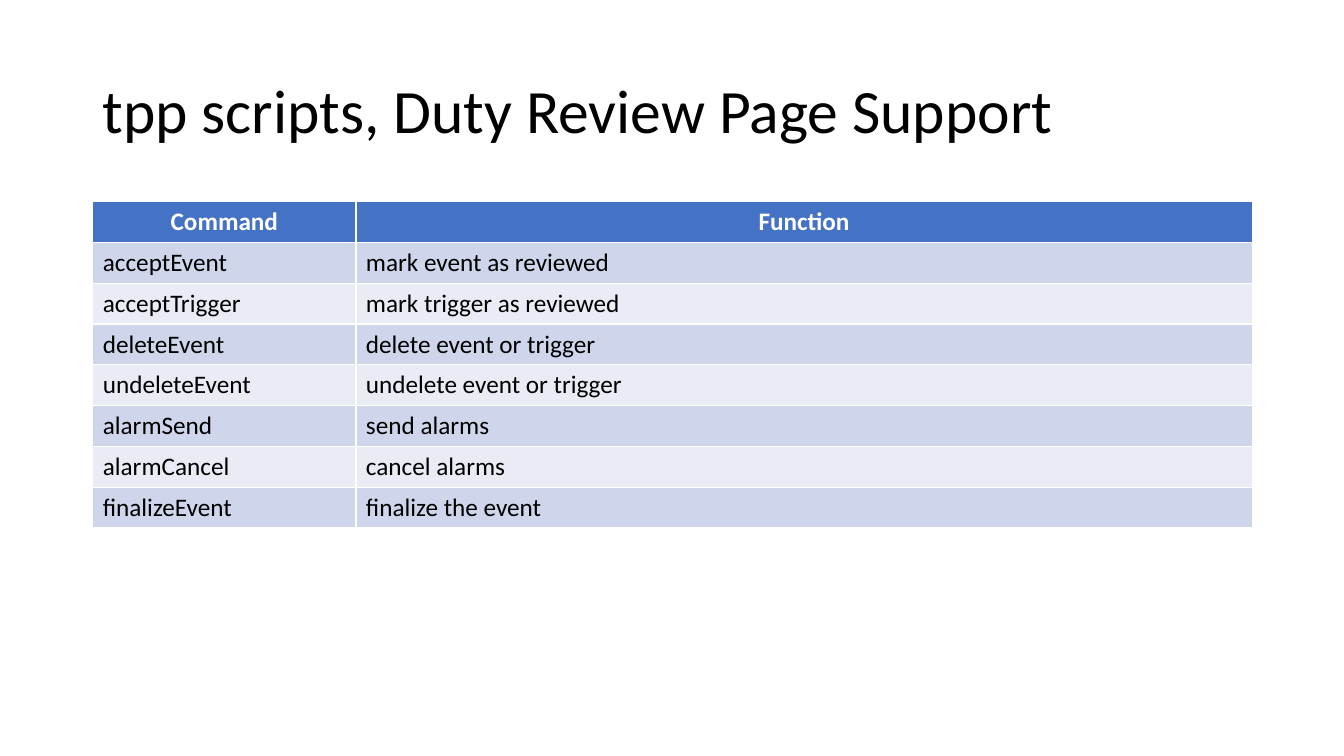
"""Build a slide with a table of the duty review page commands."""
from pptx import Presentation
from pptx.dml.color import RGBColor
from pptx.enum.text import MSO_ANCHOR, PP_ALIGN
from pptx.util import Inches, Pt

MIDDLE = MSO_ANCHOR.MIDDLE
LEFT, CENTER = PP_ALIGN.LEFT, PP_ALIGN.CENTER
FONT = "Calibri"
COLORS = {"text": "000000", "header_text": "FFFFFF", "header": "4472C4",
          "odd": "CFD5EA", "even": "E9EBF5"}
ROWS = [
    ("Command", "Function"),
    ("acceptEvent", "mark event as reviewed"),
    ("acceptTrigger", "mark trigger as reviewed"),
    ("deleteEvent", "delete event or trigger"),
    ("undeleteEvent", "undelete event or trigger"),
    ("alarmSend", "send alarms"),
    ("alarmCancel", "cancel alarms"),
    ("finalizeEvent", "finalize the event"),
]


def write(tf, text, size=18, color="text", bold=False, align=LEFT, spacing=1.0):
    """Write one formatted paragraph into a text frame."""
    p = tf.paragraphs[0]
    p.alignment = align
    p.line_spacing = spacing
    r = p.add_run()
    r.text = text
    r.font.name = FONT
    r.font.size = Pt(size)
    r.font.bold = bold
    r.font.color.rgb = RGBColor.from_string(COLORS[color])


prs = Presentation()
prs.slide_width, prs.slide_height = Inches(13.33), Inches(7.5)
s = prs.slides.add_slide(prs.slide_layouts[6])

margin = Inches(0.92)
width = Inches(11.5)
col_widths = [Inches(2.61), Inches(8.89)]
row_height = Inches(0.405)

title = s.shapes.add_textbox(margin, Inches(0.4), width, Inches(1.45))
tf = title.text_frame
tf.word_wrap = True
tf.vertical_anchor = MIDDLE
write(tf, "tpp scripts, Duty Review Page Support", size=44, spacing=0.9)

table = s.shapes.add_table(len(ROWS), len(col_widths), margin, Inches(2),
                           width, row_height * len(ROWS)).table
for column, col_width in zip(table.columns, col_widths):
    column.width = col_width

for i, texts in enumerate(ROWS):
    table.rows[i].height = row_height
    header = i == 0
    fill = "header" if header else "odd" if i % 2 else "even"
    for j, text in enumerate(texts):
        cell = table.cell(i, j)
        cell.fill.solid()
        cell.fill.fore_color.rgb = RGBColor.from_string(COLORS[fill])
        write(cell.text_frame, text, bold=header,
              color="header_text" if header else "text",
              align=CENTER if header else LEFT)

prs.save("out.pptx")
